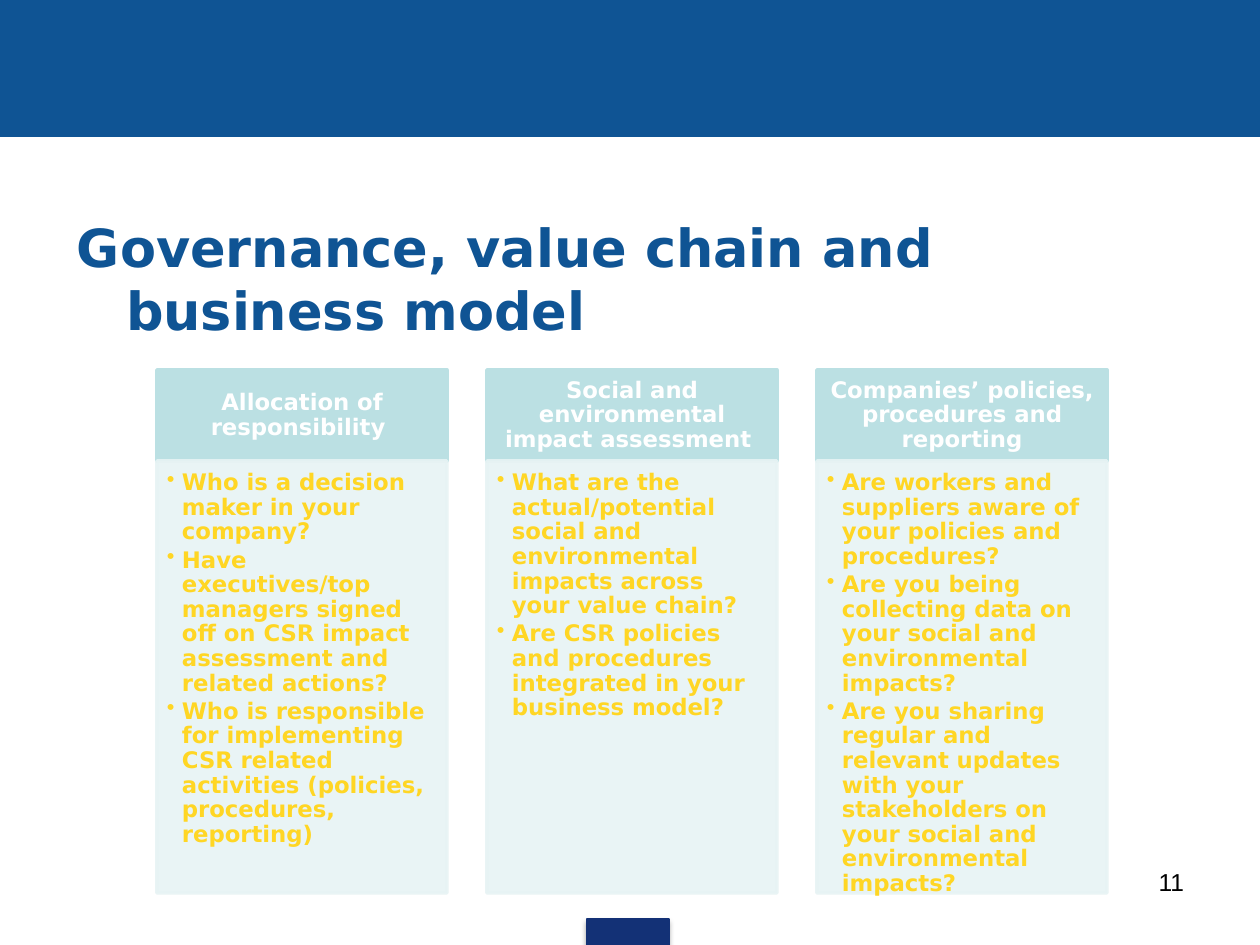
from lxml import etree
from pptx import Presentation
from pptx import util as u
from pptx.dml.color import RGBColor
from pptx.enum import shapes, text
from pptx.oxml import parse_xml
from pptx.oxml.ns import nsdecls, qn

PX_PER_INCH = 126
BLUE = RGBColor(0x0F, 0x54, 0x94)
NAVY = RGBColor(0x13, 0x31, 0x76)
TEAL = RGBColor(0xBB, 0xE0, 0xE3)
PALE = RGBColor(0xE7, 0xF3, 0xF4)
YELLOW = RGBColor(0xFF, 0xD6, 0x24)
WHITE = RGBColor(0xFF, 0xFF, 0xFF)
BLACK = RGBColor(0, 0, 0)
FONT = "DejaVu Sans"

COL_LEFT, COL_PITCH, COL_WIDTH = 157, 330, 290
HEAD_TOP, HEAD_HEIGHT, BODY_HEIGHT = 370, 91, 432

COLUMNS = [
    ("Allocation of responsibility ", [
        "Who is a decision maker in your company?",
        "Have executives/top managers signed off on CSR impact assessment and related actions?",
        "Who is responsible for implementing CSR related activities (policies, procedures, reporting)",
    ]),
    ("Social and environmental impact assessment ", [
        "What are the actual/potential social and environmental impacts across your value chain?",
        "Are CSR policies and procedures integrated in your business model?",
    ]),
    ("Companies’ policies, procedures and reporting", [
        "Are workers and suppliers aware of your policies and procedures?",
        "Are you being collecting data on your social and environmental impacts?",
        "Are you sharing regular and relevant updates with your stakeholders "
        "on your social and environmental impacts?",
    ]),
]


def px(n):
    return u.Emu(round(n * 914400 / PX_PER_INCH))


def add_rect(s, box, color, line_width):
    sp = s.shapes.add_shape(shapes.MSO_SHAPE.RECTANGLE, *map(px, box))
    sp.shadow.inherit = False
    sp.fill.solid()
    sp.fill.fore_color.rgb = color
    sp.line.color.rgb = color
    sp.line.width = u.Pt(line_width)
    return sp


def add_shadow(sp):
    effects = sp._element.spPr.find(qn("a:effectLst"))
    effects.append(parse_xml(
        f'<a:outerShdw {nsdecls("a")} blurRad="39370" dist="22860" dir="5400000" rotWithShape="0">'
        '<a:srgbClr val="000000"><a:alpha val="35000"/></a:srgbClr></a:outerShdw>'))


def set_opacity(sp, percent):
    for color in sp._element.spPr.iter(qn("a:srgbClr")):
        etree.SubElement(color, qn("a:alpha")).set("val", str(percent * 1000))


def set_frame(tf, insets, anchor):
    tf.word_wrap = True
    tf.auto_size = text.MSO_AUTO_SIZE.NONE
    tf.vertical_anchor = anchor
    tf.margin_left, tf.margin_top, tf.margin_right, tf.margin_bottom = map(px, insets)


def set_indent(p, n):
    pPr = p._p.get_or_add_pPr()
    pPr.set("marL", str(px(n)))
    pPr.set("indent", str(-px(n)))
    return pPr


def add_run(p, words, size, color, font=FONT, bold=True):
    r = p.add_run()
    r.text = words
    r.font.size = u.Pt(size)
    r.font.name = font
    r.font.bold = bold
    r.font.color.rgb = color


def add_title(s, words):
    title = s.shapes.title
    title.left, title.top, title.width, title.height = map(px, (64, 214, 1134, 129))
    set_frame(title.text_frame, (13, 6, 13, 6), text.MSO_ANCHOR.MIDDLE)
    p = title.text_frame.paragraphs[0]
    p.alignment = text.PP_ALIGN.LEFT
    set_indent(p, 49)
    add_run(p, words, 30, BLUE)


def add_heading(s, left, words):
    sp = add_rect(s, (left, HEAD_TOP, COL_WIDTH, HEAD_HEIGHT), TEAL, 2)
    set_frame(sp.text_frame, (13, 7, 13, 7), text.MSO_ANCHOR.MIDDLE)
    p = sp.text_frame.paragraphs[0]
    p.alignment = text.PP_ALIGN.CENTER
    p.line_spacing = 0.9
    add_run(p, words, 13, WHITE)


def add_questions(s, left, questions):
    sp = add_rect(s, (left, HEAD_TOP + HEAD_HEIGHT, COL_WIDTH, BODY_HEIGHT), PALE, 2)
    set_opacity(sp, 90)
    tf = sp.text_frame
    set_frame(tf, (10, 10, 13, 14), text.MSO_ANCHOR.TOP)
    for i, question in enumerate(questions):
        p = tf.add_paragraph() if i else tf.paragraphs[0]
        p.level = 1
        p.alignment = text.PP_ALIGN.LEFT
        p.line_spacing = 0.9
        p.space_after = u.Pt(2)
        etree.SubElement(set_indent(p, 15), qn("a:buChar")).set("char", "•")
        add_run(p, question, 13, YELLOW)


def add_page_number(s, number):
    sp = s.shapes.add_textbox(*map(px, (903, 861, 294, 65)))
    set_frame(sp.text_frame, (13, 6, 13, 6), text.MSO_ANCHOR.TOP)
    p = sp.text_frame.paragraphs[0]
    p.alignment = text.PP_ALIGN.RIGHT
    add_run(p, number, 14, BLACK, "Arial", False)


def main():
    prs = Presentation()
    prs.slide_width, prs.slide_height = px(1260), px(945)
    s = prs.slides.add_slide(prs.slide_layouts[5])
    add_rect(s, (0, 0, 1260, 136), BLUE, 0.75)
    add_shadow(add_rect(s, (587, 919, 82, 26), NAVY, 0.75))
    add_title(s, "Governance, value chain and business model")
    for i, (heading, questions) in enumerate(COLUMNS):
        left = COL_LEFT + i * COL_PITCH
        add_heading(s, left, heading)
        add_questions(s, left, questions)
    add_page_number(s, "11")
    prs.save("out.pptx")


if __name__ == "__main__":
    main()
